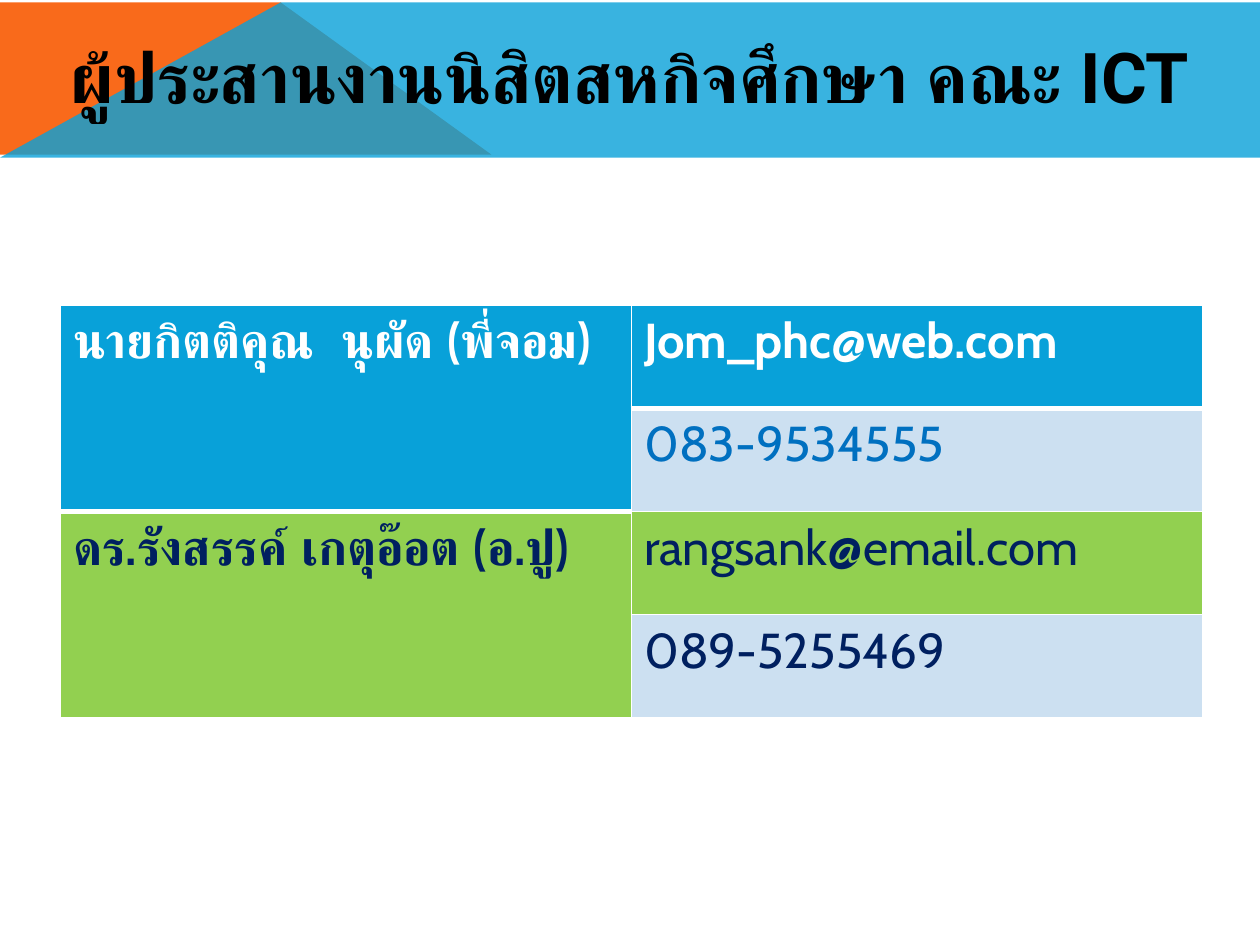
from lxml import etree
from pptx import Presentation
from pptx.dml.color import RGBColor as RGB
from pptx.enum.text import MSO_ANCHOR as Anchor, PP_ALIGN as Align
from pptx.oxml.ns import qn
from pptx.util import Cm, Pt

COLORS = {
    "orange": "F96A1B", "blue": "08A1D9", "white": "FFFFFF", "black": "000000",
    "green": "92D050", "pale": "CCE0F1", "link": "0070C0", "navy": "002060",
}
TITLE = "ผู้ประสานงานนิสิตสหกิจศึกษา คณะ ICT"
BANDS = [
    ("orange", 100, [(0, 3.12), (0, 0.05), (5.66, 0.05), (9.91, 3.12)]),
    ("blue", 80, [(0, 3.18), (5.66, 0.05), (25.4, 0.05), (25.4, 3.18)]),
]
COORDINATORS = [
    {"name": "นายกิตติคุณ  นุผัด (พี่จอม)", "email": "Jom_phc@web.com",
     "phone": "083-9534555", "fill": "blue", "name_color": "white",
     "phone_color": "link", "email_bold": True, "rule": 3},
    {"name": "ดร.รังสรรค์ เกตุอ๊อต (อ.ปู)", "email": "rangsank@email.com",
     "phone": "089-5255469", "fill": "green", "name_color": "navy",
     "phone_color": "navy", "email_bold": False, "rule": 1},
]
COLUMN_WIDTH, ROW_HEIGHT = 11.51, 2.08


def rgb(color):
    return RGB.from_string(COLORS[color])


def style(paragraph, font_name, size, color, bold):
    font = paragraph.font
    font.name, font.size, font.bold = font_name, Pt(size), bold
    font.color.rgb = rgb(color)


def draw_band(slide, color, opacity, corners):
    start, *others = [(Cm(x), Cm(y)) for x, y in corners]
    builder = slide.shapes.build_freeform(*start)
    builder.add_line_segments(others, close=True)
    band = builder.convert_to_shape()
    band.shadow.inherit = False
    band.line.fill.background()
    band.fill.solid()
    band.fill.fore_color.rgb = rgb(color)
    if opacity < 100:
        tint = band.fill._xPr.find(".//" + qn("a:srgbClr"))
        etree.SubElement(tint, qn("a:alpha"), val=str(opacity * 1000))


def paint_cell(cell, fill, bottom=1):
    cell.fill.solid()
    cell.fill.fore_color.rgb = rgb(fill)
    properties = cell._tc.get_or_add_tcPr()
    widths = {"lnL": 1, "lnR": 1, "lnT": 1, "lnB": bottom}
    for position, (side, width) in enumerate(widths.items()):
        border = etree.Element(qn("a:" + side), w=str(Pt(width)))
        solid = etree.SubElement(border, qn("a:solidFill"))
        etree.SubElement(solid, qn("a:srgbClr"), val=COLORS["white"])
        properties.insert(position, border)


def write_cell(cell, text, color, bold):
    cell.text = text
    style(cell.text_frame.paragraphs[0], "Cabin", 28, color, bold)


deck = Presentation()
deck.slide_width, deck.slide_height = Cm(25.4), Cm(19.05)
slide = deck.slides.add_slide(deck.slide_layouts[6])

for band in BANDS:
    draw_band(slide, *band)

heading = slide.shapes.add_textbox(Cm(0.95), Cm(0.53), Cm(23.5), Cm(2)).text_frame
heading.word_wrap = True
heading.vertical_anchor = Anchor.MIDDLE
heading.text = TITLE
heading.paragraphs[0].alignment = Align.CENTER
style(heading.paragraphs[0], "Roboto", 40, "black", True)

row_count = 2 * len(COORDINATORS)
contacts = slide.shapes.add_table(
    row_count, 2, Cm(1.22), Cm(6.15), Cm(2 * COLUMN_WIDTH), Cm(row_count * ROW_HEIGHT)
).table
for column in contacts.columns:
    column.width = Cm(COLUMN_WIDTH)
for row in contacts.rows:
    row.height = Cm(ROW_HEIGHT)

for index, person in enumerate(COORDINATORS):
    top = 2 * index
    name, email = contacts.cell(top, 0), contacts.cell(top, 1)
    name_end, phone = contacts.cell(top + 1, 0), contacts.cell(top + 1, 1)
    name.merge(name_end)
    for cell in (name, name_end, email):
        paint_cell(cell, person["fill"], person["rule"])
    paint_cell(phone, "pale")
    write_cell(name, person["name"], person["name_color"], True)
    write_cell(email, person["email"], person["name_color"], person["email_bold"])
    write_cell(phone, person["phone"], person["phone_color"], False)

deck.save("out.pptx")
